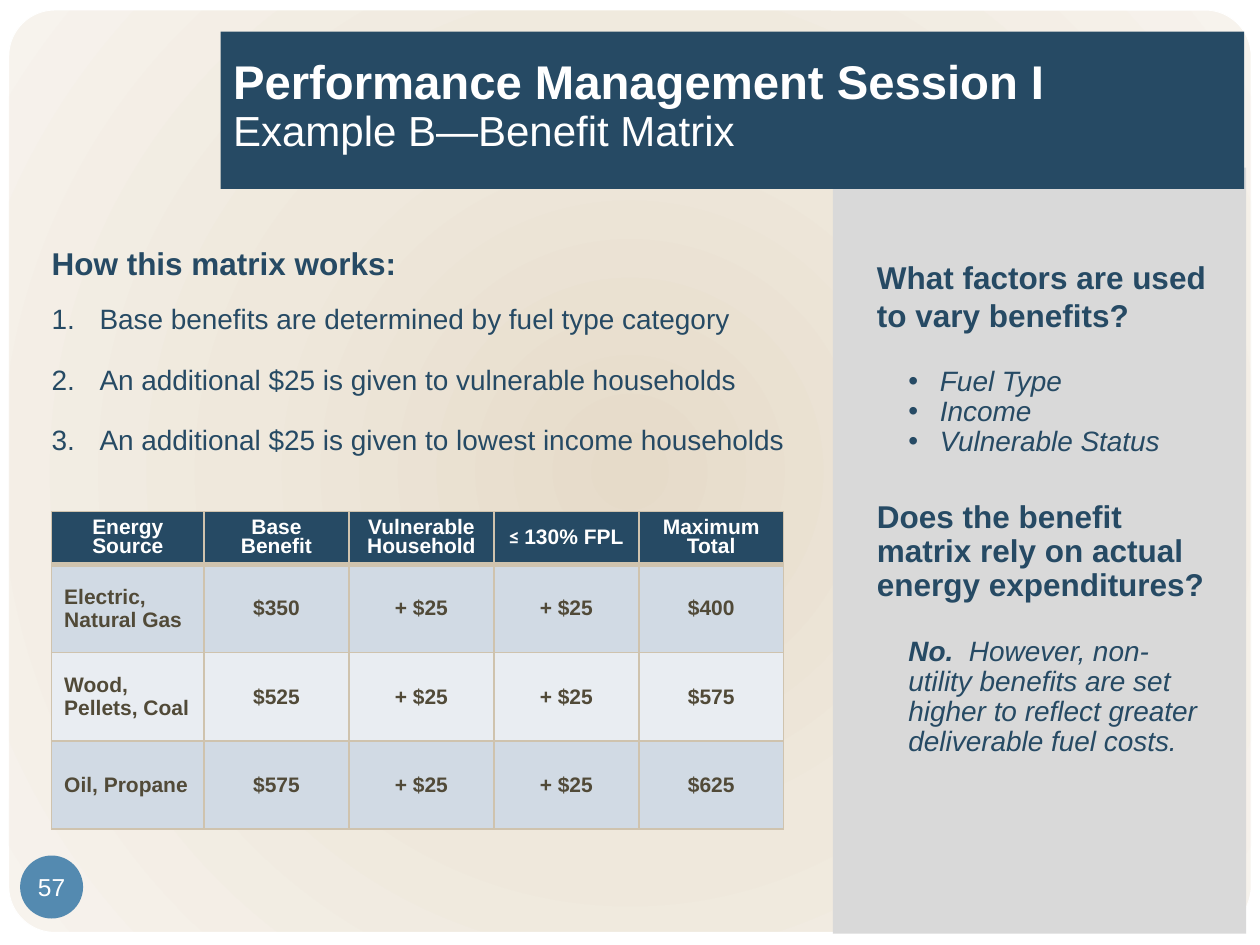
from dataclasses import dataclass

import lxml.etree
import pptx
import pptx.dml.color
import pptx.enum.shapes
import pptx.enum.text
import pptx.oxml
import pptx.oxml.ns
import pptx.util

COLORS = {
    "navy": "264A64", "white": "FFFFFF", "panel": "D9D9D9", "badge": "548AB0",
    "brown": "514A38", "border": "CFC3AE", "band": "D1DAE4", "light": "E9EDF2",
    "center": "E6DBC9", "middle": "EFE8DC", "edge": "F7F3ED",
}
SLIDE_WIDTH, SLIDE_HEIGHT = pptx.util.Inches(10), pptx.util.Inches(7.5)
GRID_COLUMNS = 40
CELL = SLIDE_WIDTH / GRID_COLUMNS
ALIGN = pptx.enum.text.PP_ALIGN
ANCHOR = pptx.enum.text.MSO_ANCHOR
SHAPE = pptx.enum.shapes.MSO_SHAPE
NUMBER = '<a:buAutoNum {} type="arabicPeriod"/>'
DOT = '<a:buChar {} char="•"/>'
PLAIN = "<a:buNone {}/>"


@dataclass(frozen=True)
class Box:
    column: float
    row: float
    columns: float
    rows: float

    def lengths(self) -> list[int]:
        return [grid(n) for n in (self.column, self.row, self.columns, self.rows)]


@dataclass(frozen=True)
class Span:
    text: str
    size: float | None = None
    bold: bool | None = None
    font: str | None = None


@dataclass(frozen=True)
class Line:
    spans: tuple[Span, ...]
    size: float | None = 16
    bold: bool | None = False
    italic: bool = False
    color: str = "navy"
    font: str | None = "Arial"
    before: float = 0
    spacing: float = 0.9
    margin: float = 0
    indent: float = 0
    bullet: str = PLAIN
    align: ALIGN = ALIGN.LEFT


def grid(cells: float) -> int:
    return round(cells * CELL)


def rgb(name: str) -> pptx.dml.color.RGBColor:
    return pptx.dml.color.RGBColor.from_string(COLORS[name])


def xml(text: str) -> lxml.etree._Element:
    return pptx.oxml.parse_xml(text.format(pptx.oxml.ns.nsdecls("a")))


def text(content: str, **style) -> Line:
    return Line((Span(content),), **style)


def write(frame, lines: list[Line]) -> None:
    for number, line in enumerate(lines):
        paragraph = frame.paragraphs[0] if number == 0 else frame.add_paragraph()
        paragraph.alignment = line.align
        paragraph.line_spacing = line.spacing
        paragraph.space_before = pptx.util.Pt(line.before)
        paragraph.space_after = pptx.util.Pt(0)
        properties = paragraph._p.get_or_add_pPr()
        properties.set("marL", str(grid(line.margin)))
        properties.set("indent", str(grid(line.indent)))
        properties.append(xml(line.bullet))
        style = paragraph.font
        style.bold, style.italic, style.name = line.bold, line.italic, line.font
        style.size = pptx.util.Pt(line.size) if line.size else None
        style.color.rgb = rgb(line.color)
        for position, span in enumerate(line.spans):
            if position and line.size is None:
                paragraph.add_line_break()
            run = paragraph.add_run()
            run.text = span.text
            if span.size:
                run.font.size = pptx.util.Pt(span.size)
            if span.bold is not None:
                run.font.bold = span.bold
            if span.font:
                run.font.name = span.font


def draw_shape(slide, kind: SHAPE, box: Box, color: str):
    shape = slide.shapes.add_shape(kind, *box.lengths())
    shape.shadow.inherit = False
    shape.fill.solid()
    shape.fill.fore_color.rgb = rgb(color)
    shape.line.fill.background()
    return shape


def draw_frame(slide) -> None:
    frame = draw_shape(slide, SHAPE.ROUNDED_RECTANGLE, Box(0.28, 0.32, 39.44, 29.28), "center")
    frame.adjustments[0] = 0.05
    frame.line.color.rgb = rgb("white")
    frame.line.width = pptx.util.Pt(0.5)
    stops = "".join(
        f'<a:gs pos="{share * 1000}"><a:srgbClr val="{COLORS[name]}"/></a:gs>'
        for share, name in ((0, "center"), (50, "middle"), (100, "edge"))
    )
    solid = frame._element.spPr.find(pptx.oxml.ns.qn("a:solidFill"))
    solid.getparent().replace(solid, xml(
        "<a:gradFill {}><a:gsLst>" + stops + '</a:gsLst><a:path path="circle">'
        '<a:fillToRect l="50000" t="50000" r="50000" b="50000"/></a:path></a:gradFill>'
    ))


def fill_placeholder(slide, placeholder, box: Box, lines: list[Line], anchor: ANCHOR):
    placeholder.left, placeholder.top, placeholder.width, placeholder.height = box.lengths()
    slide.shapes._spTree.append(placeholder._element)
    frame = placeholder.text_frame
    frame.word_wrap = True
    frame.auto_size = pptx.enum.text.MSO_AUTO_SIZE.NONE
    frame.vertical_anchor = anchor
    write(frame, lines)
    return frame


def draw_borders(cell, widths: dict[str, float]) -> None:
    properties = cell._tc.get_or_add_tcPr()
    for position, (side, width) in enumerate(widths.items()):
        properties.insert(position, xml(
            f'<a:ln{side} {{}} w="{pptx.util.Pt(width)}"><a:solidFill>'
            f'<a:srgbClr val="{COLORS["border"]}"/></a:solidFill></a:ln{side}>'
        ))


def draw_matrix(slide) -> None:
    widths, heights = [4.84] + [4.6] * 4, [1.68] + [2.8] * 3
    headings = ["Energy Source", "Base Benefit", "Vulnerable Household", "≤ 130% FPL", "Maximum Total"]
    benefits = [("Electric,\nNatural Gas", 350), ("Wood, Pellets, Coal", 525), ("Oil, Propane", 575)]
    extra = 25
    rows = [headings] + [
        [source, f"${base}", f"+ ${extra}", f"+ ${extra}", f"${base + 2 * extra}"]
        for source, base in benefits
    ]
    box = Box(1.64, 16.24, sum(widths), sum(heights))
    matrix = slide.shapes.add_table(len(rows), len(widths), *box.lengths()).table
    for column, width in zip(matrix.columns, widths):
        column.width = grid(width)
    for row, height in zip(matrix.rows, heights):
        row.height = grid(height)
    for r, values in enumerate(rows):
        for c, value in enumerate(values):
            cell = matrix.cell(r, c)
            cell.vertical_anchor = ANCHOR.MIDDLE
            cell.fill.solid()
            cell.fill.fore_color.rgb = rgb("navy" if r == 0 else "band" if r % 2 else "light")
            draw_borders(cell, {"L": 1, "R": 1, "T": 3 if r == 1 else 1, "B": 3 if r == 0 else 1})
            style = dict(
                size=12, bold=True, color="brown" if r else "white", spacing=1 if r else 0.8,
                align=ALIGN.LEFT if r and c == 0 else ALIGN.CENTER,
            )
            if value.startswith("≤"):
                spans = (Span("≤ ", font="Calibri"), Span(value[2:], font="Arial"))
                write(cell.text_frame, [Line(spans, font=None, **style)])
            else:
                write(cell.text_frame, [text(part, **style) for part in value.split("\n")])


def main() -> None:
    deck = pptx.Presentation()
    deck.slide_width, deck.slide_height = SLIDE_WIDTH, SLIDE_HEIGHT
    slide = deck.slides.add_slide(deck.slide_layouts[3])
    title, works, factors = list(slide.placeholders)[:3]

    draw_frame(slide)
    draw_shape(slide, SHAPE.RECTANGLE, Box(26.44, 5.32, 13.12, 24.32), "panel")
    badge = draw_shape(slide, SHAPE.OVAL, Box(0.64, 27.16, 2, 2), "badge").text_frame
    badge.margin_left = badge.margin_right = badge.margin_top = badge.margin_bottom = 0
    badge.word_wrap = False
    badge.vertical_anchor = ANCHOR.MIDDLE
    write(badge, [text("57", size=14, color="white", spacing=1, align=ALIGN.CENTER)])

    steps = ["Base benefits are determined by fuel type category",
             "An additional $25 is given to vulnerable households",
             "An additional $25 is given to lowest income households"]
    fill_placeholder(slide, works, Box(1.24, 7.68, 24.64, 7.08), [
        text("How this matrix works:", size=18, bold=True),
        *(text(step, before=17.5 if n else 13, margin=1.52, indent=-1.52, bullet=NUMBER)
          for n, step in enumerate(steps)),
    ], ANCHOR.TOP)

    title.fill.solid()
    title.fill.fore_color.rgb = rgb("navy")
    heading = fill_placeholder(slide, title, Box(7, 1, 32.5, 5), [Line(
        (Span("Performance Management Session I", 27, True), Span("Example B—Benefit Matrix", 24, False)),
        size=None, bold=None, color="white",
    )], ANCHOR.MIDDLE)
    heading.margin_bottom = grid(0.4)

    answer = (Span("No.  ", bold=True), Span("However, non-utility benefits are set higher "
                                            "to reflect greater deliverable fuel costs.", bold=False))
    fill_placeholder(slide, factors, Box(27.44, 8, 11.32, 16.52), [
        text("What factors are used to vary benefits?", size=18, bold=True, spacing=1),
        *(text(factor, italic=True, before=0 if n else 19, margin=2, indent=-1, bullet=DOT)
          for n, factor in enumerate(["Fuel Type", "Income", "Vulnerable Status"])),
        text("Does the benefit matrix rely on actual energy expenditures?", size=18, bold=True, before=25),
        Line(answer, bold=None, italic=True, before=19, margin=1),
    ], ANCHOR.TOP)

    draw_matrix(slide)
    deck.save("out.pptx")


if __name__ == "__main__":
    main()
